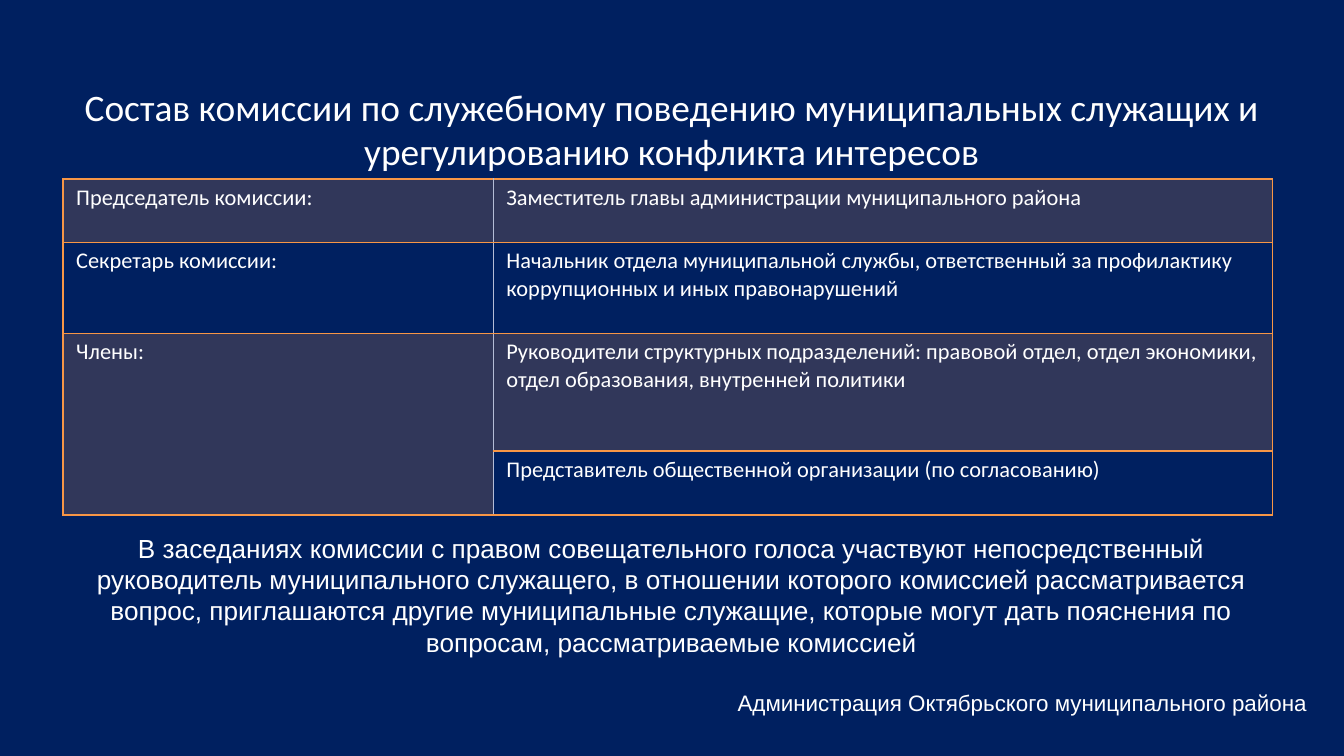
"""Build the slide on the composition of the conflict of interest commission."""
from lxml.etree import SubElement
from pptx import Presentation
from pptx.dml.color import RGBColor
from pptx.enum.text import MSO_ANCHOR, PP_ALIGN
from pptx.oxml import parse_xml
from pptx.oxml.ns import nsdecls, qn
from pptx.util import Cm, Pt


def rgb(value):
    return RGBColor.from_string(value)


def write(tf, text, size, font, align=PP_ALIGN.LEFT):
    tf.word_wrap = True
    p = tf.paragraphs[0]
    p.text = text
    p.alignment = align
    p.font.size = Pt(size)
    p.font.name = font
    p.font.color.rgb = rgb(WHITE)


NAVY, WHITE, ORANGE, PALE = "002060", "FFFFFF", "F79646", "B4BCD6"

prs = Presentation()
prs.slide_width, prs.slide_height = Cm(25.4), Cm(14.29)
s = prs.slides.add_slide(prs.slide_layouts[6])
s.background.fill.solid()
s.background.fill.fore_color.rgb = rgb(NAVY)

texts = [
    ("Состав комиссии по служебному поведению муниципальных служащих и урегулированию конфликта интересов",
     1.27, 1.48, 22.86, 1.9, 20, "Calibri", PP_ALIGN.CENTER, MSO_ANCHOR.MIDDLE),
    ("В заседаниях комиссии с правом совещательного голоса участвуют непосредственный руководитель "
     "муниципального служащего, в отношении которого комиссией рассматривается вопрос, приглашаются "
     "другие муниципальные служащие, которые могут дать пояснения по вопросам, рассматриваемые комиссией",
     1.19, 9.93, 23, 2.64, 14, "Arial", PP_ALIGN.CENTER, MSO_ANCHOR.TOP),
    ("Администрация Октябрьского муниципального района",
     13.69, 12.9, 11.3, 0.77, 12, "Arial", PP_ALIGN.LEFT, MSO_ANCHOR.TOP),
]
for text, left, top, width, height, size, font, align, anchor in texts:
    sp = s.shapes.add_textbox(Cm(left), Cm(top), Cm(width), Cm(height))
    sp.text_frame.vertical_anchor = anchor
    write(sp.text_frame, text, size, font, align)

rows = [
    ("Председатель комиссии:", "Заместитель главы администрации муниципального района"),
    ("Секретарь комиссии:",
     "Начальник отдела муниципальной службы, ответственный за профилактику коррупционных и иных правонарушений"),
    ("Члены:",
     "Руководители структурных подразделений: правовой отдел, отдел экономики, отдел образования, внутренней политики"),
    ("", "Представитель общественной организации (по согласованию)"),
]
widths, heights = [8.13, 14.73], [1.2, 1.72, 2.22, 1.21]
table = s.shapes.add_table(len(rows), len(widths), Cm(1.19), Cm(3.38),
                           Cm(sum(widths)), Cm(sum(heights))).table
for column, width in zip(table.columns, widths):
    column.width = Cm(width)
for row, height in zip(table.rows, heights):
    row.height = Cm(height)
table.cell(2, 0).merge(table.cell(3, 0))

for i, row in enumerate(rows):
    for j, text in enumerate(row):
        cell = table.cell(i, j)
        cell.margin_left = cell.margin_right = Cm(0.25)
        cell.margin_top = cell.margin_bottom = Cm(0.1)
        if text:
            write(cell.text_frame, text, 12, "Calibri")
        tcPr = cell._tc.get_or_add_tcPr()
        if i % 2 == 0 or not text:
            cell.fill.solid()
            cell.fill.fore_color.rgb = rgb(ORANGE)
            color = tcPr.find(".//" + qn("a:srgbClr"))
            SubElement(color, qn("a:alpha"), val="20000")
        else:
            cell.fill.background()
        for k, side in enumerate("LRTB"):
            inner = (j, side) in [(0, "R"), (1, "L")]
            line_color, line_width = (PALE, Pt(0.5)) if inner else (ORANGE, Pt(1))
            tcPr.insert(k, parse_xml(
                f'<a:ln{side} {nsdecls("a")} w="{line_width}"><a:solidFill>'
                f'<a:srgbClr val="{line_color}"/></a:solidFill></a:ln{side}>'))

prs.save("out.pptx")
